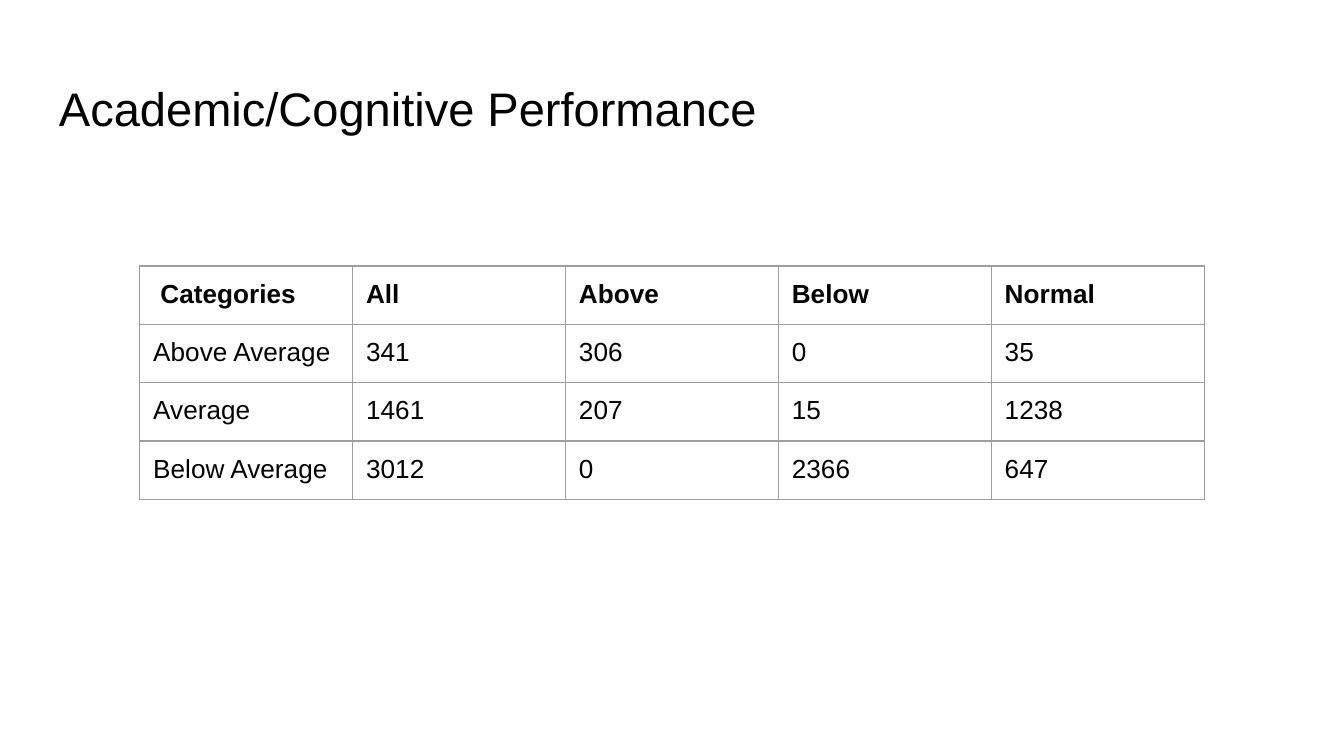
import pptx
import pptx.dml.color
import pptx.enum.text
import pptx.oxml
import pptx.oxml.ns
import pptx.util
from pptx.util import Inches

TITLE = "Academic/Cognitive Performance"
ROWS = [
    (" Categories", "All", "Above", "Below", "Normal"),
    ("Above Average", "341", "306", "0", "35"),
    ("Average", "1461", "207", "15", "1238"),
    ("Below Average", "3012", "0", "2366", "647"),
]
COLORS = {"text": "000000", "border": "9E9E9E", "background": "FFFFFF"}
TITLE_FORMAT = {"name": "Arial", "size": pptx.util.Pt(25.2), "bold": False}
BODY_FORMAT = {"name": "Arial", "size": pptx.util.Pt(14), "bold": False}
HEADER_FORMAT = {**BODY_FORMAT, "bold": True}
PARA_FORMAT = {"line_spacing": 1.0, "space_before": pptx.util.Pt(0),
               "space_after": pptx.util.Pt(0)}
TABLE_WIDTH, TABLE_HEIGHT = 7.92, 1.67
PLAIN_TABLE_STYLE = "{2D5ABB26-0587-4C30-8999-92F81FD0307C}"
MARGINS = ("margin_left", "margin_top", "margin_right", "margin_bottom")


def apply_format(target, values):
    for name, value in values.items():
        setattr(target, name, value)


def write(frame, text, text_format):
    para = frame.paragraphs[0]
    apply_format(para, PARA_FORMAT)
    span = para.add_run()
    span.text = text
    apply_format(span.font, text_format)
    span.font.color.rgb = pptx.dml.color.RGBColor.from_string(COLORS["text"])


def set_margins(target):
    apply_format(target, dict.fromkeys(MARGINS, Inches(0.1)))


def add_borders(cell):
    # Border lines must come before the fill in the cell properties
    properties = cell._tc.get_or_add_tcPr()
    for index, side in enumerate(("lnL", "lnR", "lnT", "lnB")):
        line = pptx.oxml.parse_xml(
            f'<a:{side} {pptx.oxml.ns.nsdecls("a")} w="{pptx.util.Pt(0.75)}">'
            f'<a:solidFill><a:srgbClr val="{COLORS["border"]}"/></a:solidFill>'
            f'</a:{side}>')
        properties.insert(index, line)


# Widescreen page
deck = pptx.Presentation()
deck.slide_width, deck.slide_height = Inches(10), Inches(10 * 9 / 16)
page = deck.slides.add_slide(deck.slide_layouts[6])
page.background.fill.solid()
page.background.fill.fore_color.rgb = pptx.dml.color.RGBColor.from_string(COLORS["background"])

# Title
box = page.shapes.add_textbox(Inches(0.34), Inches(0.49), Inches(9.32), Inches(0.63))
box.text_frame.word_wrap = True
box.text_frame.vertical_anchor = pptx.enum.text.MSO_ANCHOR.MIDDLE
set_margins(box.text_frame)
write(box.text_frame, TITLE, TITLE_FORMAT)

# Performance table
row_count, column_count = len(ROWS), len(ROWS[0])
table = page.shapes.add_table(
    row_count, column_count, Inches(1.04), Inches(1.98),
    Inches(TABLE_WIDTH), Inches(TABLE_HEIGHT)).table
table.first_row = table.horz_banding = False
table._tbl.tblPr.find(pptx.oxml.ns.qn("a:tableStyleId")).text = PLAIN_TABLE_STYLE
for row_index, values in enumerate(ROWS):
    for column_index, value in enumerate(values):
        cell = table.cell(row_index, column_index)
        set_margins(cell)
        cell.fill.background()
        add_borders(cell)
        write(cell.text_frame, value, BODY_FORMAT if row_index else HEADER_FORMAT)

deck.save("out.pptx")
